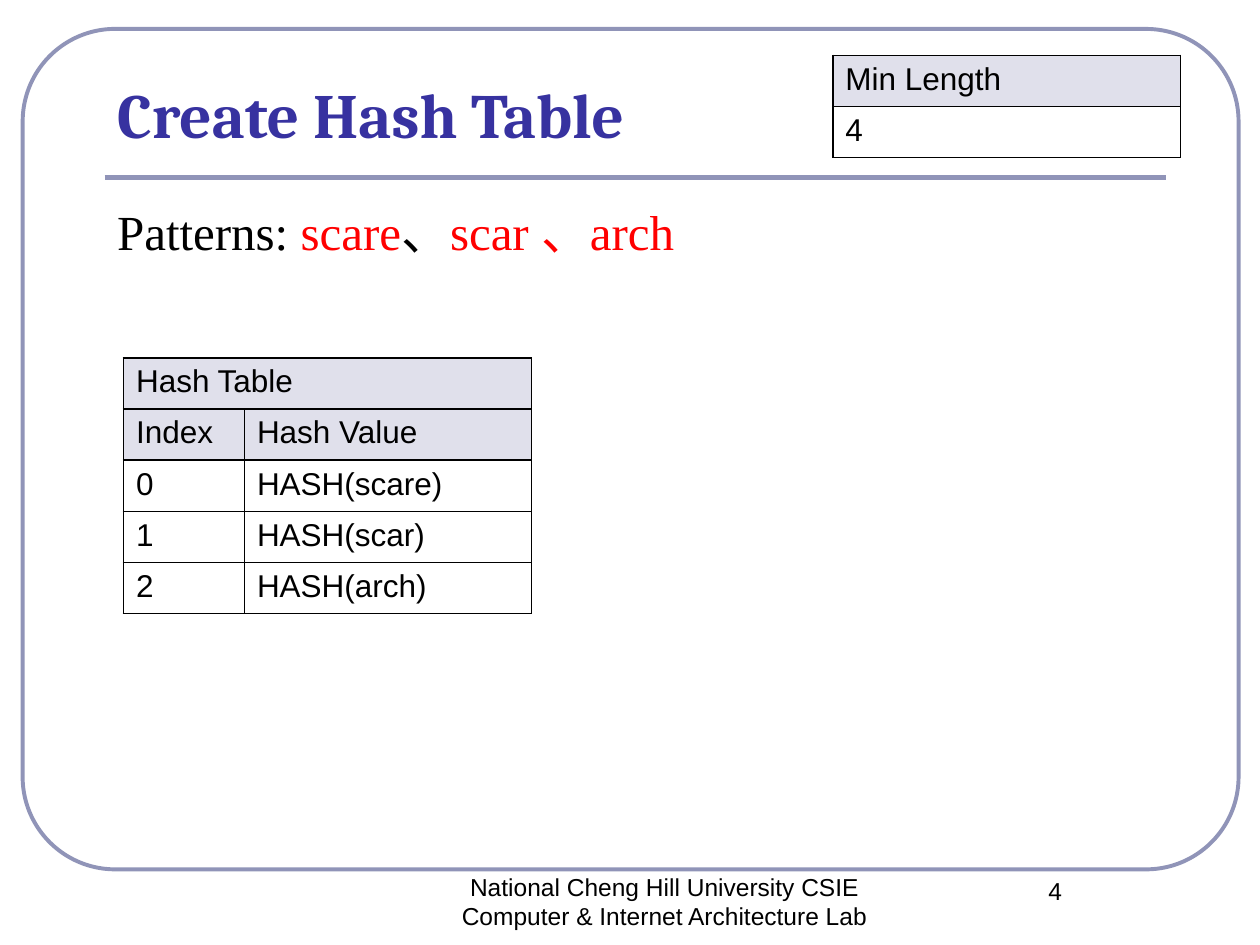
from lxml import etree
from pptx import Presentation
from pptx import util as u
from pptx.dml.color import RGBColor
from pptx.enum import shapes, text
from pptx.oxml.ns import qn

BLACK = RGBColor(0x00, 0x00, 0x00)
RED = RGBColor(0xFF, 0x00, 0x00)
INDIGO = RGBColor(0x37, 0x32, 0xA0)
LAVENDER = RGBColor(0x90, 0x94, 0xB8)
HEADER_FILL = RGBColor(0xE0, 0xE0, 0xEB)


def add_run(paragraph, wording, font="Arial", size=18, color=BLACK, bold=False):
    run = paragraph.add_run()
    run.text = wording
    run.font.name = font
    run.font.size = u.Pt(size)
    run.font.color.rgb = color
    run.font.bold = bold


def border_cell(cell):
    props = cell._tc.get_or_add_tcPr()
    for position, side in enumerate(("lnL", "lnR", "lnT", "lnB")):
        edge = etree.Element(qn(f"a:{side}"), w=str(u.Pt(1)))
        fill = etree.SubElement(edge, qn("a:solidFill"))
        etree.SubElement(fill, qn("a:srgbClr"), val=str(BLACK))
        props.insert(position, edge)


class SlideBuilder:
    def __init__(self, slide):
        self.slide = slide
        self.line_color = LAVENDER

    def place(self, placeholder, left, top, width, height, anchor):
        placeholder.left, placeholder.top = u.Inches(left), u.Inches(top)
        placeholder.width, placeholder.height = u.Inches(width), u.Inches(height)
        placeholder.text_frame.vertical_anchor = anchor
        paragraph = placeholder.text_frame.paragraphs[0]
        paragraph.alignment = text.PP_ALIGN.LEFT
        return paragraph

    def frame(self, left, top, width, height, rounding):
        border = self.slide.shapes.add_shape(
            shapes.MSO_SHAPE.ROUNDED_RECTANGLE, u.Inches(left), u.Inches(top),
            u.Inches(width), u.Inches(height))
        border.adjustments[0] = rounding
        border.shadow.inherit = False
        border.fill.background()
        border.line.color.rgb = self.line_color
        border.line.width = u.Pt(2.25)

    def rule(self, left, right, y):
        divider = self.slide.shapes.add_connector(
            shapes.MSO_CONNECTOR.STRAIGHT, u.Inches(left), u.Inches(y),
            u.Inches(right), u.Inches(y))
        divider.line.color.rgb = self.line_color
        divider.line.width = u.Pt(3)
        etree.SubElement(divider._element.spPr, qn("a:effectLst"))

    def footer(self, wording, left, top, width, height, margin=0.1):
        box = self.slide.shapes.add_textbox(
            u.Inches(left), u.Inches(top), u.Inches(width), u.Inches(height))
        box.text_frame.word_wrap = True
        box.text_frame.margin_left = box.text_frame.margin_right = u.Inches(margin)
        paragraph = box.text_frame.paragraphs[0]
        paragraph.alignment = text.PP_ALIGN.CENTER
        add_run(paragraph, wording, size=14)

    def table(self, rows, left, top, widths, height, header_rows):
        grid = self.slide.shapes.add_table(
            len(rows), len(widths), u.Inches(left), u.Inches(top),
            u.Inches(sum(widths)), u.Inches(height)).table
        grid.first_row = grid.horz_banding = False
        for column, width in zip(grid.columns, widths):
            column.width = u.Inches(width)
        for r, row in enumerate(rows):
            for c in range(len(widths)):
                cell = grid.cell(r, c)
                if r < header_rows:
                    cell.fill.solid()
                    cell.fill.fore_color.rgb = HEADER_FILL
                else:
                    cell.fill.background()
                border_cell(cell)
                if c < len(row):
                    add_run(cell.text_frame.paragraphs[0], row[c])
            # A short row spans the full width
            if len(row) < len(widths):
                grid.cell(r, 0).merge(grid.cell(r, len(widths) - 1))


def main():
    deck = Presentation()
    deck.slide_width, deck.slide_height = u.Inches(10), u.Inches(7.5)
    slide = deck.slides.add_slide(deck.slide_layouts[1])
    builder = SlideBuilder(slide)

    # Frame and title rule
    builder.frame(0.18, 0.23, 9.65, 6.67, rounding=0.11)
    builder.rule(0.83, 9.25, 1.41)

    # Title
    title = builder.place(slide.shapes.title, 0.83, 0.6, 8.42, 0.65,
                          text.MSO_ANCHOR.BOTTOM)
    add_run(title, "Create Hash Table", font="Cambria", size=36,
            color=INDIGO, bold=True)

    # Pattern list
    patterns = builder.place(slide.placeholders[1], 0.83, 1.55, 8.42, 4.95,
                             text.MSO_ANCHOR.TOP)
    props = patterns._p.get_or_add_pPr()
    props.set("marL", "0")
    props.set("indent", "0")
    etree.SubElement(props, qn("a:buNone"))
    for wording, color in (("Patterns:", BLACK), (" scare", RED),
                           ("、", BLACK), ("scar 、arch", RED)):
        add_run(patterns, wording, font="Times New Roman", size=28, color=color)

    # Tables
    words = ("scare", "scar", "arch")
    hash_rows = [("Hash Table",), ("Index", "Hash Value")]
    hash_rows += [(str(i), f"HASH({word})") for i, word in enumerate(words)]
    builder.table(hash_rows, 0.98, 2.84, (0.96, 2.28), 2.03, header_rows=2)
    min_length = min(map(len, words))
    builder.table([("Min Length",), (str(min_length),)], 6.61, 0.44, (2.76,),
                  0.81, header_rows=1)

    # Footer and slide number
    builder.footer("National Cheng Hill University CSIE "
                   "Computer & Internet Architecture Lab",
                   3.11, 6.87, 4.33, 0.5, margin=0.3)
    builder.footer("4", 7.5, 6.9, 1.75, 0.5)

    deck.save("out.pptx")


if __name__ == "__main__":
    main()
